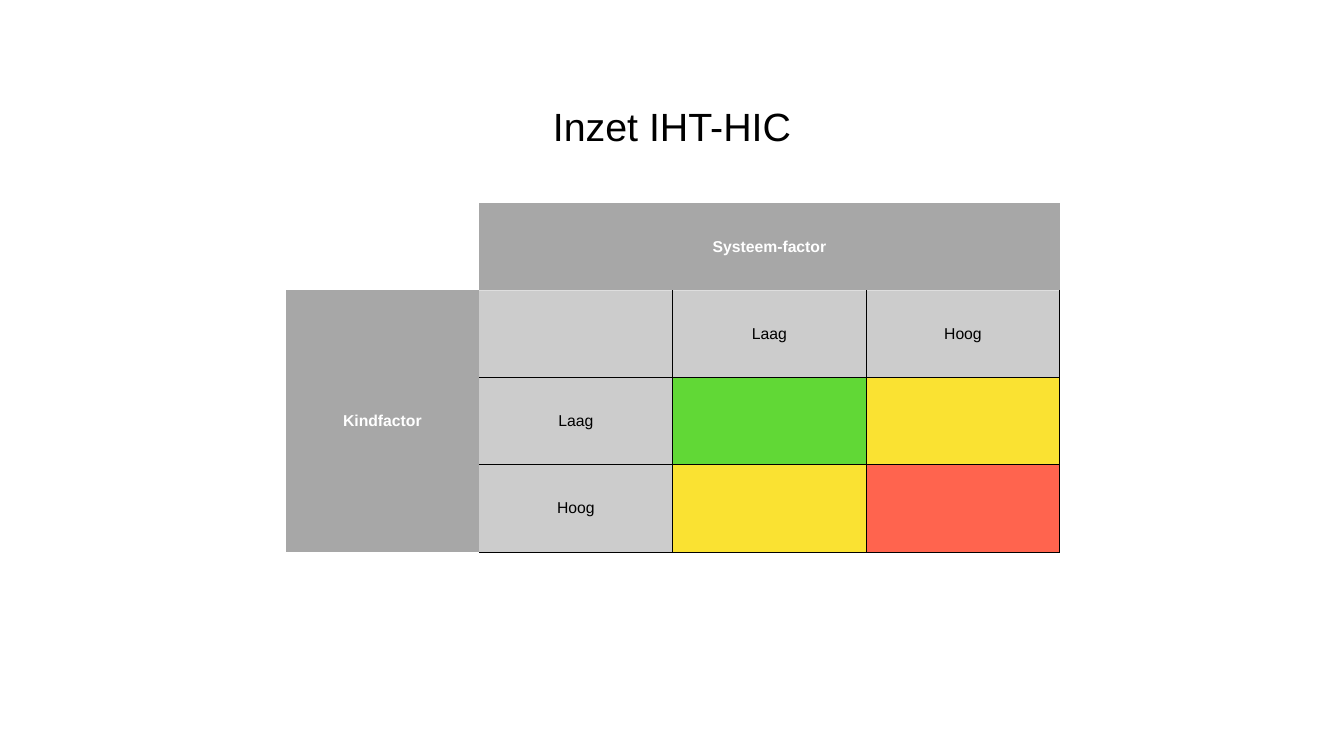
from lxml import etree
from pptx import Presentation
from pptx import util as u
from pptx.dml.color import RGBColor
from pptx.enum import text
from pptx.oxml.ns import qn

FONT = "Arial"
TITLE = "Inzet IHT-HIC"
NO_STYLE = "{2D5ABB26-0587-4C30-8999-92F81FD0307C}"
BLACK, WHITE = "000000", "FFFFFF"
HEADER, GREEN, YELLOW, RED = "A7A7A7", "61D836", "FAE232", "FF644E"
LABEL = BLACK  # shown at LABEL_OPACITY percent
LABEL_OPACITY = 20

LABELS = [
    ["", "", "Systeem-factor", ""],
    ["", "", "Laag", "Hoog"],
    ["Kindfactor", "Laag", "", ""],
    ["", "Hoog", "", ""],
]
FILLS = [
    [None, HEADER, HEADER, HEADER],
    [HEADER, LABEL, LABEL, LABEL],
    [HEADER, LABEL, GREEN, YELLOW],
    [HEADER, LABEL, YELLOW, RED],
]
LEFT, TOP, COL_W, ROW_H = 4.03, 2.87, 2.73, 1.23


def color(value):
    return RGBColor.from_string(value)


def add_run(p, words, size, value, bold=False):
    p.alignment = text.PP_ALIGN.CENTER
    r = p.add_run()
    r.text = words
    r.font.name, r.font.size, r.font.bold = FONT, u.Pt(size), bold
    r.font.color.rgb = color(value)


def set_margins(box, inches):
    box.margin_left = box.margin_right = u.Inches(inches)
    box.margin_top = box.margin_bottom = u.Inches(inches)


def add_borders(cell, sides):
    tcPr = cell._tc.get_or_add_tcPr()
    for side in "LRTB":
        ln = etree.SubElement(tcPr, qn(f"a:ln{side}"), w=str(u.Pt(1)))
        if side in sides:
            fill = etree.SubElement(ln, qn("a:solidFill"))
            etree.SubElement(fill, qn("a:srgbClr"), val=BLACK)
        else:
            etree.SubElement(ln, qn("a:noFill"))


def fill_cell(cell, value):
    if value is None:
        cell.fill.background()
        return
    cell.fill.solid()
    cell.fill.fore_color.rgb = color(value)
    if value == LABEL:
        clr = cell._tc.tcPr.find(qn("a:solidFill")).find(qn("a:srgbClr"))
        etree.SubElement(clr, qn("a:alpha"), val=str(LABEL_OPACITY * 1000))


def border_sides(row, col):
    """Grid lines surround the inner cells, except along the two headers."""
    if row == 0 or col == 0:
        return ""
    return "RB" + ("T" if row > 1 else "") + ("L" if col > 1 else "")


prs = Presentation()
prs.slide_width, prs.slide_height = u.Inches(18.96), u.Inches(10.67)
s = prs.slides.add_slide(prs.slide_layouts[5])

title = s.shapes.title
title.left, title.top = u.Inches(7.71), u.Inches(1.38)
title.width, title.height = u.Inches(3.54), u.Inches(0.79)
tf = title.text_frame
tf.word_wrap = False
tf.auto_size = text.MSO_AUTO_SIZE.SHAPE_TO_FIT_TEXT
tf.vertical_anchor = text.MSO_ANCHOR.MIDDLE
set_margins(tf, 0.06)
add_run(tf.paragraphs[0], TITLE, 40, BLACK)

rows, cols = len(LABELS), len(LABELS[0])
frame = s.shapes.add_table(rows, cols, u.Inches(LEFT), u.Inches(TOP),
                           u.Inches(cols * COL_W), u.Inches(rows * ROW_H))
matrix = frame.table
matrix.first_row = matrix.horz_banding = False
matrix._tbl.tblPr.find(qn("a:tableStyleId")).text = NO_STYLE
for column in matrix.columns:
    column.width = u.Inches(COL_W)
for row in matrix.rows:
    row.height = u.Inches(ROW_H)

for i in range(rows):
    for j in range(cols):
        cell = matrix.cell(i, j)
        add_borders(cell, border_sides(i, j))
        fill_cell(cell, FILLS[i][j])
        cell.vertical_anchor = text.MSO_ANCHOR.MIDDLE
        set_margins(cell, 0)
        if LABELS[i][j]:
            header = FILLS[i][j] == HEADER
            add_run(cell.text_frame.paragraphs[0], LABELS[i][j], 16,
                    WHITE if header else BLACK, header)

prs.save("out.pptx")
